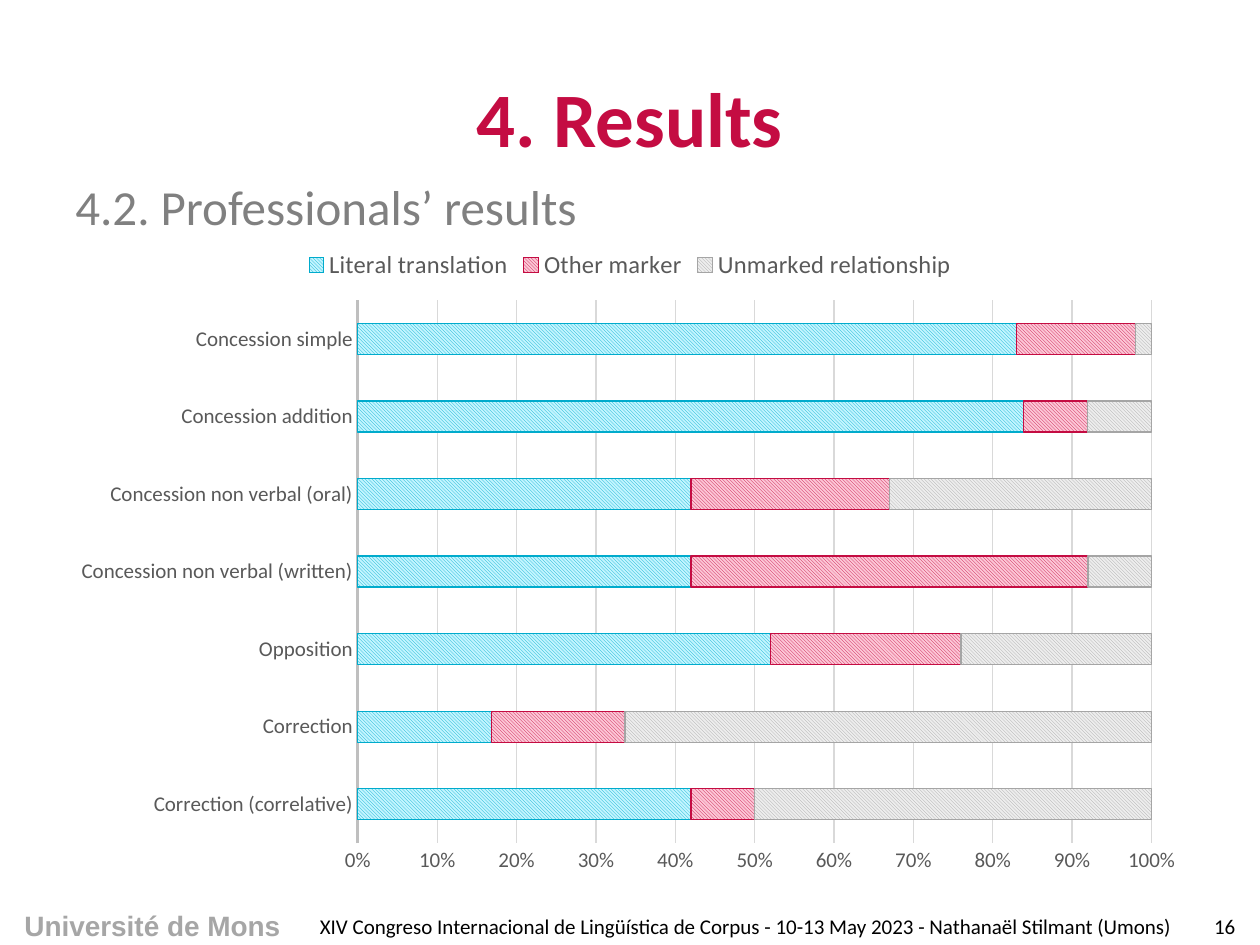
import pptx
import pptx.util
import pptx.chart.data
import pptx.dml.color
import pptx.enum.chart
import pptx.enum.dml
import pptx.enum.text
import pptx.oxml

W, H = 10, 7.5
MARGIN = 0.05 * W
FOOT_TOP, FOOT_H = 0.96 * H, 0.04 * H

C = {
    "crimson": "C40C42", "pink": "FCC6D6",
    "teal": "00ABCC", "aqua": "C2F5FF",
    "gray": "A5A5A5", "pale": "EDEDED",
    "heading": "808080", "brand": "A6A6A6", "label": "595959",
    "axis": "BFBFBF", "grid": "D9D9D9", "black": "000000",
}

ALIGN = pptx.enum.text.PP_ALIGN
ANCHOR = pptx.enum.text.MSO_ANCHOR

TITLE = ("4. Results", (MARGIN, 0.04 * H, W - 2 * MARGIN, 1.25), ALIGN.CENTER, ANCHOR.MIDDLE,
         {"name": "Calibri", "size": 44, "bold": True, "color": "crimson"})
FOOT = {"name": "Calibri", "size": 12, "bold": False, "color": "black"}
TEXTS = [
    ("Université de Mons", (-0.01, 7.16, 2.44, 0.37), ALIGN.CENTER, ANCHOR.TOP,
     {"name": "Arial", "size": 16, "bold": True, "color": "brand"}),
    ("4.2. Professionals’ results", (MARGIN, 0.18 * H, W - 2 * MARGIN, 0.6), ALIGN.JUSTIFY, ANCHOR.TOP,
     {"name": "Calibri", "size": 28, "bold": False, "color": "heading"}),
    ("16", (9.44, FOOT_TOP, 0.56, FOOT_H), ALIGN.CENTER, ANCHOR.MIDDLE, FOOT),
    ("XIV Congreso Internacional de Lingüística de Corpus - 10-13 May 2023 - Nathanaël Stilmant (Umons)",
     (2.44, FOOT_TOP, 7, FOOT_H), ALIGN.LEFT, ANCHOR.MIDDLE, FOOT),
]

CHART_BOX = (MARGIN, 1.87, W - 2 * MARGIN, 5.13)
PLOT_SHARE = {"x": 0.26, "y": 0.1, "w": 0.7, "h": 0.84}
CATEGORIES = [
    "Correction (correlative)", "Correction", "Opposition",
    "Concession non verbal (written)", "Concession non verbal (oral)",
    "Concession addition", "Concession simple",
]
SERIES = [
    ("Literal translation", (42, 17, 52, 42, 42, 83, 83), "teal", "aqua"),
    ("Other marker", (8, 17, 24, 50, 25, 8, 15), "crimson", "pink"),
    ("Unmarked relationship", (50, 67, 24, 8, 33, 8, 2), "gray", "pale"),
]


def rgb(key):
    return pptx.dml.color.RGBColor.from_string(C[key])


def inches(box):
    return [pptx.util.Inches(v) for v in box]


def set_font(font, fmt):
    values = {"name": fmt["name"], "size": pptx.util.Pt(fmt["size"]), "bold": fmt["bold"]}
    for key, value in values.items():
        setattr(font, key, value)
    font.color.rgb = rgb(fmt["color"])


def set_line(line, color, width):
    line.color.rgb = rgb(color)
    line.width = pptx.util.Pt(width)


def write(sp, text, align, anchor, fmt):
    tf = sp.text_frame
    tf.word_wrap = True
    tf.vertical_anchor = anchor
    p = tf.paragraphs[0]
    p.alignment = align
    r = p.add_run()
    r.text = text
    set_font(r.font, fmt)


def add_results_chart(s):
    data = pptx.chart.data.CategoryChartData()
    data.categories = CATEGORIES
    for name, values, _, _ in SERIES:
        data.add_series(name, values)
    kind = pptx.enum.chart.XL_CHART_TYPE.BAR_STACKED_100
    chart = s.shapes.add_chart(kind, *inches(CHART_BOX), data).chart
    label = {"name": "Calibri", "size": 12, "bold": False, "color": "label"}
    set_font(chart.font, label)
    chart.has_title = False

    chart.has_legend = True
    chart.legend.position = pptx.enum.chart.XL_LEGEND_POSITION.TOP
    chart.legend.include_in_layout = False
    set_font(chart.legend.font, {**label, "size": 14})

    for axis in (chart.category_axis, chart.value_axis):
        axis.major_tick_mark = axis.minor_tick_mark = pptx.enum.chart.XL_TICK_MARK.NONE
        set_font(axis.tick_labels.font, label)
    chart.category_axis.has_major_gridlines = False
    set_line(chart.category_axis.format.line, "axis", 1.5)
    value_axis = chart.value_axis
    value_axis.minimum_scale, value_axis.maximum_scale, value_axis.major_unit = 0, 1, 0.1
    value_axis.tick_labels.number_format = "0%"
    value_axis.tick_labels.number_format_is_linked = False
    value_axis.format.line.fill.background()
    value_axis.has_major_gridlines = True
    set_line(value_axis.major_gridlines.format.line, "grid", 0.75)

    plot = chart.plots[0]
    plot.gap_width, plot.overlap, plot.vary_by_categories = 150, 100, False
    for series, (_, _, dark, light) in zip(plot.series, SERIES):
        fill = series.format.fill
        fill.patterned()
        fill.pattern = pptx.enum.dml.MSO_PATTERN.LIGHT_DOWNWARD_DIAGONAL
        fill.fore_color.rgb = rgb(dark)
        fill.back_color.rgb = rgb(light)
        set_line(series.format.line, dark, 0.75)

    modes = '<c:xMode val="edge"/><c:yMode val="edge"/>'
    shares = "".join(f'<c:{k} val="{v}"/>' for k, v in PLOT_SHARE.items())
    layout = pptx.oxml.parse_xml(
        '<c:layout xmlns:c="http://schemas.openxmlformats.org/drawingml/2006/chart">'
        f'<c:manualLayout><c:layoutTarget val="inner"/>{modes}{shares}</c:manualLayout></c:layout>')
    area = chart._chartSpace.chart.plotArea
    for old in area.xpath("c:layout"):
        area.remove(old)
    area.insert(0, layout)


def main():
    prs = pptx.Presentation()
    prs.slide_width, prs.slide_height = inches((W, H))
    s = prs.slides.add_slide(prs.slide_layouts[5])
    text, box, *style = TITLE
    title = s.shapes.title
    for key, value in zip(("left", "top", "width", "height"), inches(box)):
        setattr(title, key, value)
    write(title, text, *style)
    for text, box, *style in TEXTS:
        write(s.shapes.add_textbox(*inches(box)), text, *style)
    add_results_chart(s)
    prs.save("out.pptx")


if __name__ == "__main__":
    main()
